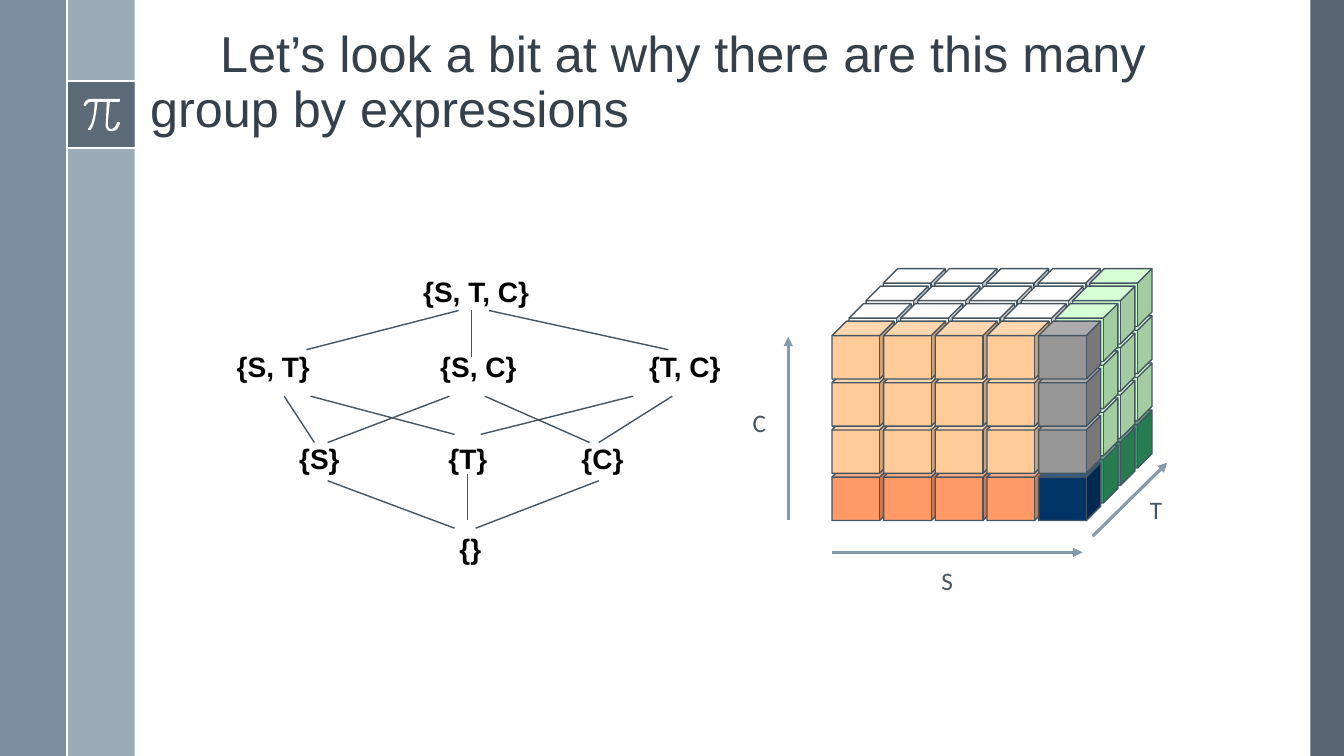
from dataclasses import dataclass
from itertools import product
from lxml.etree import SubElement as Sub
from pptx import Presentation
from pptx.dml.color import RGBColor as Rgb
from pptx.enum.shapes import MSO_CONNECTOR as Conn, MSO_SHAPE as Kind
from pptx.enum.text import MSO_ANCHOR as Anchor, MSO_AUTO_SIZE as Fit
from pptx.oxml.ns import qn
from pptx.util import Pt


@dataclass(frozen=True)
class Theme:
    dark: str = "475562"
    steel: str = "6A8093"
    pale: str = "9BAAB7"
    white: str = "FFFFFF"
    black: str = "000000"
    head: str = "35404A"
    ink: str = "465562"
    axis: str = "879AAA"
    peach: str = "FFCC99"
    coral: str = "FF9966"
    grey: str = "969696"
    navy: str = "003366"
    mint: str = "CCFFCC"
    green: str = "339966"
    title: int = 36
    node: int = 20
    label: int = 18
    sans: str = "Arial"
    body: str = "Calibri"


T = Theme()

BARS = [
    (936, 0, 24, 540, T.dark, 90),
    (48, 0, 48.2, 540, T.pale, 100),
    (0, 0, 48, 540, T.steel, 88),
    (48, 58.1, 48.2, 48, T.dark, 75),
]
RULES = [(48, 58.1, 96.4, 58.1), (48, 106, 96.4, 106), (48, 0, 48, 540)]
PI = [
    (85, 70.6), (64.8, 70.6), (61.2, 70.6, 59.8, 74.2, 59.8, 74.9),
    (59.8, 74.9, 59.8, 75.6, 60.5, 75.6), (61.2, 75.6),
    (61.2, 75.6, 62.6, 72.7, 64.8, 72.7), (67.7, 72.7),
    (67.7, 75.6, 67, 87.8, 63.4, 91.4), (62.6, 92.2, 62.6, 92.2, 63.4, 92.9),
    (64.1, 92.9), (64.8, 92.9), (68.4, 88.6, 69.1, 75.6, 69.8, 72.7),
    (76.3, 72.7), (75.6, 87.8), (75.6, 87.8, 74.9, 90.7, 77, 92.9),
    (77.8, 93.6, 78.5, 93.6, 79.2, 93.6), (80.6, 93.6),
    (84.2, 93.6, 85.7, 88.6, 85.7, 87.8), (85.7, 87.8, 85, 87.1, 85, 87.1),
    (84.2, 87.1, 83.5, 87.1, 83.5, 87.8), (83.5, 87.8, 82.8, 91.4, 79.9, 92.2),
    (79.2, 92.2, 78.5, 92.2, 77.8, 91.4), (77, 90.7, 77, 88.6, 77, 87.8),
    (78.5, 72.7), (85, 72.7), (85.7, 72.7, 85.7, 72, 85.7, 72),
    (85.7, 71.3, 85.7, 70.6, 85, 70.6),
]
EDGES = [
    (327.6, 221.8, 218.9, 249.8), (349.2, 221.8, 477.4, 249.8),
    (337, 221.8, 337, 254.9), (203, 283, 224.6, 316.1),
    (234, 316.1, 321.1, 283), (346.3, 283, 421.2, 316.1),
    (427.7, 316.1, 480.2, 283), (324.7, 310.3, 221.8, 283),
    (343.4, 310.3, 452.2, 283), (324.7, 377.3, 234, 343.4),
    (339.8, 377.3, 427.7, 343.4), (334.1, 371.5, 334.1, 338.4),
]
NODES = [
    ("{S, T, C}", 295.2, 192.2, 96.5), ("{S, T}", 162, 246.2, 72.7),
    ("{S, C}", 307.4, 246.2, 74.9), ("{T, C}", 456.5, 246.2, 66.2),
    ("{S}", 206.6, 311.8, 49), ("{T}", 313.2, 311.8, 48.2),
    ("{C}", 408.2, 311.8, 44.6), ("{}", 321.1, 375.8, 36),
]
AXES = [
    ("S", 665.3, 400.3, (594, 394.6, 773.3, 394.6)),
    ("C", 530.6, 287.3, (563, 371.5, 563, 240.5)),
    ("T", 814.3, 349.2, (780.5, 383, 833.8, 330.5)),
]


def put(obj, vals):
    for key, val in vals.items():
        setattr(obj, key, val)


def paint(shape, tone, edge=None, alpha=100):
    shape.shadow.inherit = False
    shape.fill.solid()
    shape.fill.fore_color.rgb = Rgb.from_string(tone)
    if alpha < 100:
        clr = shape.element.spPr.find(".//" + qn("a:srgbClr"))
        Sub(clr, qn("a:alpha"), val=str(alpha * 1000))
    if edge:
        shape.line.color.rgb = Rgb.from_string(edge)
        shape.line.width = Pt(1)
    else:
        shape.line.fill.background()


def block(shapes, kind, x, y, w, h, tone, edge=None, alpha=100):
    shape = shapes.add_shape(kind, Pt(x), Pt(y), Pt(w), Pt(h))
    paint(shape, tone, edge, alpha)


def rule(shapes, ends, tone, wide, arrow=False):
    line = shapes.add_connector(Conn.STRAIGHT, *map(Pt, ends))
    line.line.color.rgb = Rgb.from_string(tone)
    line.line.width = Pt(wide)
    if arrow:
        Sub(line.line._get_or_add_ln(), qn("a:tailEnd"), type="triangle")
    Sub(line.element.spPr, qn("a:effectLst"))


def text(shapes, words, x, y, w, h, tone, font, frame):
    box = shapes.add_textbox(Pt(x), Pt(y), Pt(w), Pt(h))
    put(box.text_frame, frame)
    para = box.text_frame.paragraphs[0]
    run = para.add_run()
    run.text = words
    put(run.font, font)
    run.font.color.rgb = Rgb.from_string(tone)
    return para


def trace(path):
    dots = [path[0]]
    for step in path[1:]:
        if len(step) == 2:
            dots.append(step)
            continue
        a, b, c, d = dots[-1], step[:2], step[2:4], step[4:]
        for t in (0.2, 0.4, 0.6, 0.8, 1):
            u = 1 - t
            mix = (u ** 3, 3 * u * u * t, 3 * u * t * t, t ** 3)
            dots.append(tuple(
                sum(m * p[i] for m, p in zip(mix, (a, b, c, d))) for i in (0, 1)))
    return [(Pt(x), Pt(y)) for x, y in dots]


def sign(shapes):
    dots = trace(PI)
    pen = shapes.build_freeform(*dots[0])
    pen.add_line_segments(dots[1:], close=True)
    paint(pen.convert_to_shape(), T.white)


def frame(shapes):
    for x, y, w, h, tone, alpha in BARS:
        block(shapes, Kind.RECTANGLE, x, y, w, h, tone, alpha=alpha)
    for ends in RULES:
        rule(shapes, ends, T.white, 1.5)
    sign(shapes)


def title(shapes):
    para = text(shapes, "Let’s look a bit at why there are this many group by expressions",
                100.1, 0, 803.5, 102.2, T.head,
                {"size": Pt(T.title), "name": T.sans},
                {"word_wrap": True, "vertical_anchor": Anchor.BOTTOM})
    para.line_spacing = 0.9
    para._p.get_or_add_pPr().set("indent", str(Pt(50)))


def shade(deep, row, col):
    last = col == 4
    if deep == 0 and row == 0:
        return T.navy if last else T.coral
    if deep == 0:
        return T.grey if last else T.peach
    if row == 0:
        return T.green
    return T.mint if last else T.white


def cube(shapes):
    for deep, row, col in product((3, 2, 1, 0), range(4), range(5)):
        if deep == 0 or row == 3 or col == 4:
            block(shapes, Kind.CUBE, 594.3 + 36.9 * col + 12.2 * deep,
                  330.5 - 33.7 * row - 12.5 * deep, 44.4, 41.3,
                  shade(deep, row, col), T.ink)


def graph(shapes):
    for ends in EDGES:
        rule(shapes, ends, T.ink, 1)
    for words, x, y, w in NODES:
        text(shapes, words, x, y, w, 31.5, T.black,
             {"size": Pt(T.node), "name": T.sans, "bold": True},
             {"word_wrap": False, "auto_size": Fit.SHAPE_TO_FIT_TEXT})


def axes(shapes):
    for words, x, y, ends in AXES:
        rule(shapes, ends, T.axis, 2.25, True)
        text(shapes, words, x, y, 62.6, 29.1, T.ink,
             {"size": Pt(T.label), "name": T.body},
             {"word_wrap": True, "auto_size": Fit.SHAPE_TO_FIT_TEXT})


def main():
    deck = Presentation()
    put(deck, {"slide_width": Pt(960), "slide_height": Pt(540)})
    shapes = deck.slides.add_slide(deck.slide_layouts[6]).shapes
    frame(shapes)
    title(shapes)
    cube(shapes.add_group_shape().shapes)
    graph(shapes.add_group_shape().shapes)
    axes(shapes)
    deck.save("out.pptx")


if __name__ == "__main__":
    main()
